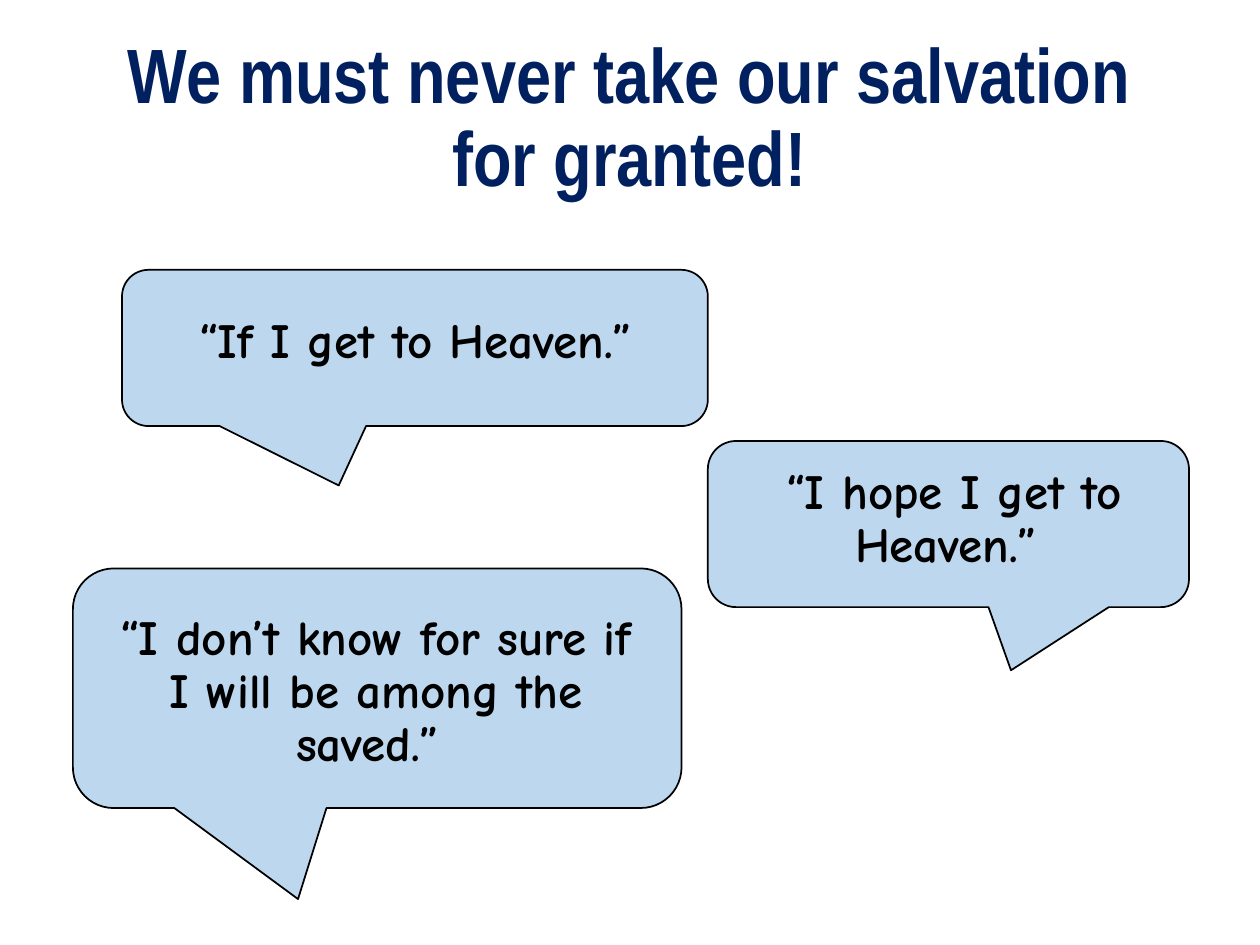
import pptx
import pptx.util
import pptx.dml.color
import pptx.enum.shapes
import pptx.enum.text
from pptx.util import Cm

COLOURS = {"title": "002060", "bubble": "BDD7EE", "ink": "000000"}

# Bubble box, sideways shift of its tip, quote box, quote (lengths in cm)
QUOTES = [
    ((14.27, 8.89, 9.7, 3.35), 0.13, (15.01, 9.3, 8.46, 2.59),
     "“I hope I get to Heaven.” "),
    ((1.47, 11.46, 12.27, 4.83), -0.13, (1.85, 12.24, 11.46, 4.32),
     "“I don’t know for sure if I will be among the saved.” "),
    ((2.46, 5.44, 11.81, 3.15), -0.13, (2.82, 6.25, 11.46, 1.7),
     "“If I get to Heaven.” "),
]


def colour(name):
    return pptx.dml.color.RGBColor.from_string(COLOURS[name])


def add_bubble(slide, box, tip_shift):
    """Add a speech bubble; tip_shift is a share of its width from the centre."""
    bubble = slide.shapes.add_shape(
        pptx.enum.shapes.MSO_SHAPE.ROUNDED_RECTANGULAR_CALLOUT, *map(Cm, box))
    bubble.adjustments[0] = tip_shift
    bubble.adjustments[1] = 0.88
    bubble.adjustments[2] = 0.17
    bubble.shadow.inherit = False
    bubble.fill.solid()
    bubble.fill.fore_color.rgb = colour("bubble")
    bubble.line.color.rgb = colour("ink")
    bubble.line.width = pptx.util.Pt(1)


def add_text(slide, box, text, font_name, size, ink, anchor, space_before=0):
    frame = slide.shapes.add_textbox(*map(Cm, box)).text_frame
    frame.word_wrap = True
    frame.vertical_anchor = anchor
    paragraph = frame.paragraphs[0]
    paragraph.text = text
    paragraph.alignment = pptx.enum.text.PP_ALIGN.CENTER
    paragraph.line_spacing = 0.9
    paragraph.space_before = pptx.util.Pt(space_before)
    paragraph.font.name = font_name
    paragraph.font.size = pptx.util.Pt(size)
    paragraph.font.bold = True
    paragraph.font.color.rgb = colour(ink)


def main():
    presentation = pptx.Presentation()
    presentation.slide_width = Cm(25.4)
    presentation.slide_height = Cm(19.05)
    slide = presentation.slides.add_slide(presentation.slide_layouts[6])
    anchors = pptx.enum.text.MSO_ANCHOR

    for bubble_box, tip_shift, _, _ in QUOTES:
        add_bubble(slide, bubble_box, tip_shift)
    add_text(slide, (1.75, 0.58, 21.89, 3.68),
             "We must never take our salvation for granted!",
             "Arial Narrow", 44, "title", anchors.MIDDLE)
    for _, _, quote_box, quote in QUOTES:
        add_text(slide, quote_box, quote, "Comic Neue", 28, "ink",
                 anchors.TOP, space_before=10)

    presentation.save("out.pptx")


if __name__ == "__main__":
    main()
